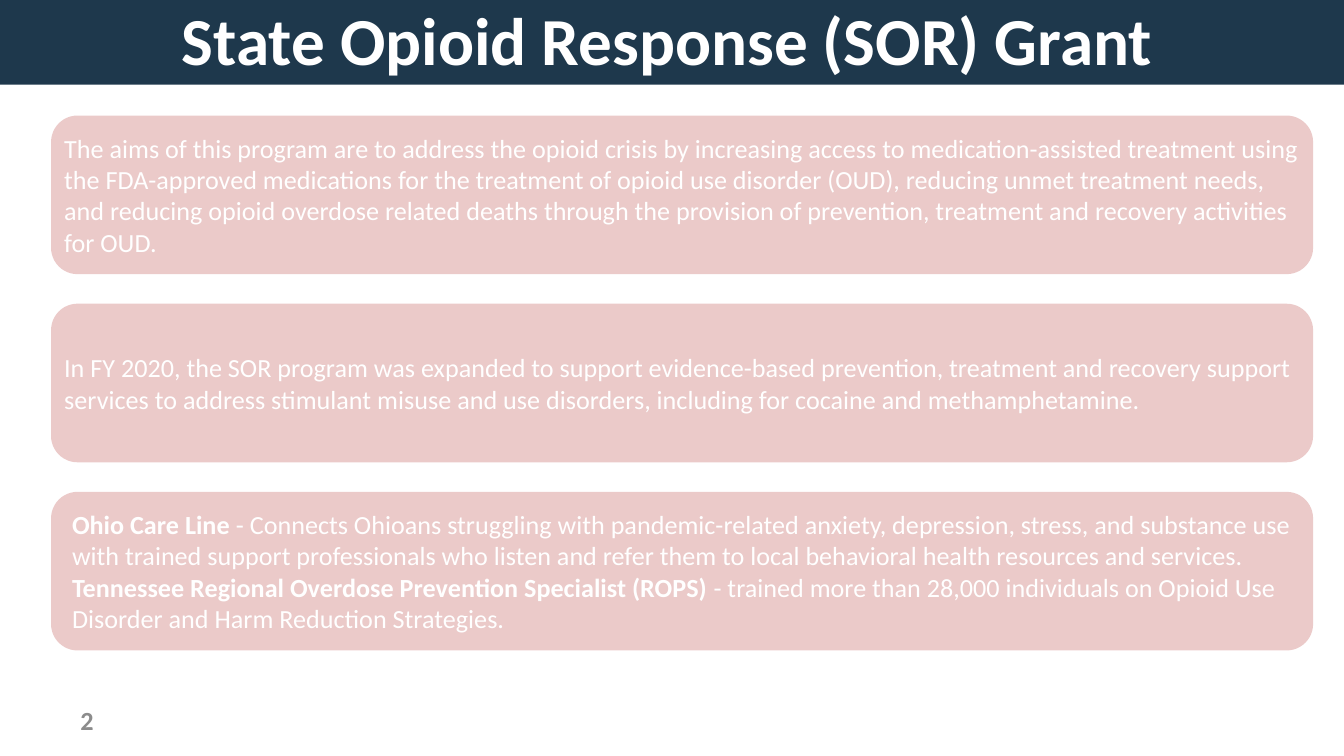
from pptx import Presentation
from pptx.dml.color import RGBColor
from pptx.enum.shapes import MSO_SHAPE
from pptx.enum.text import MSO_ANCHOR, PP_ALIGN
from pptx.oxml.ns import qn
from pptx.util import Inches, Pt
from lxml.etree import SubElement

TITLE = "State Opioid Response (SOR) Grant"
PAGE_NUMBER = "2"
PANELS = [
    {"inset": 0.04, "paragraphs": [
        ("", "The aims of this program are to address the opioid crisis by increasing access to "
             "medication-assisted treatment using the FDA-approved medications for the treatment "
             "of opioid use disorder (OUD), reducing unmet treatment needs, and reducing opioid "
             "overdose related deaths through the provision of prevention, treatment and recovery "
             "activities for OUD."),
    ]},
    {"inset": 0.04, "paragraphs": [
        ("", "In FY 2020, the SOR program was expanded to support evidence-based prevention, "
             "treatment and recovery support services to address stimulant misuse and use "
             "disorders, including for cocaine and methamphetamine."),
    ]},
    {"inset": 0.1, "paragraphs": [
        ("Ohio Care Line ",
         "- Connects Ohioans struggling with pandemic-related anxiety, depression, stress, and "
         "substance use with trained support professionals who listen and refer them to local "
         "behavioral health resources and services."),
        ("Tennessee Regional Overdose Prevention Specialist (ROPS) ",
         "- trained more than 28,000 individuals on Opioid Use Disorder and Harm Reduction "
         "Strategies."),
    ]},
]

THEME = {
    "font": "Calibri",
    "title_size": 36,
    "body_size": 14,
    "banner": "1E384C",
    "panel": "D99694",
    "panel_opacity": 50,
    "light": "FFFFFF",
    "muted": "8C8C8C",
}

SLIDE_WIDTH = Inches(10)
SLIDE_HEIGHT = SLIDE_WIDTH * 9 // 16
PANEL_LEFT, PANEL_TOP, PANEL_WIDTH, PANEL_HEIGHT = 0.38, 0.86, 9.39, 1.18
PANEL_STEP = 1.4


def style_font(font, size, color, bold=False):
    font.name = THEME["font"]
    font.size = Pt(size)
    font.bold = bold
    font.color.rgb = RGBColor.from_string(color)


def add_block(slide, preset, box, color):
    block = slide.shapes.add_shape(preset, *map(Inches, box))
    block.shadow.inherit = False
    block.fill.solid()
    block.fill.fore_color.rgb = RGBColor.from_string(color)
    block.line.fill.background()
    return block


def add_label(slide, box, text, size, color, align):
    frame = slide.shapes.add_textbox(*map(Inches, box)).text_frame
    frame.word_wrap = True
    frame.vertical_anchor = MSO_ANCHOR.MIDDLE
    frame.text = text
    frame.paragraphs[0].alignment = align
    style_font(frame.paragraphs[0].runs[0].font, size, color, bold=True)


def add_panel(slide, top, content):
    panel = add_block(slide, MSO_SHAPE.ROUNDED_RECTANGLE,
                      (PANEL_LEFT, top, PANEL_WIDTH, PANEL_HEIGHT), THEME["panel"])
    fill_color = next(panel.element.iter(qn("a:srgbClr")))
    SubElement(fill_color, qn("a:alpha")).set("val", str(THEME["panel_opacity"] * 1000))
    frame = panel.text_frame
    frame.word_wrap = True
    frame.vertical_anchor = MSO_ANCHOR.MIDDLE
    frame.margin_left = frame.margin_right = Inches(content["inset"])
    for index, (lead, detail) in enumerate(content["paragraphs"]):
        paragraph = frame.add_paragraph() if index else frame.paragraphs[0]
        paragraph.alignment = PP_ALIGN.LEFT
        for text, bold in ((lead, True), (detail, False)):
            if text:
                run = paragraph.add_run()
                run.text = text
                style_font(run.font, THEME["body_size"], THEME["light"], bold)


def main():
    deck = Presentation()
    deck.slide_width, deck.slide_height = SLIDE_WIDTH, SLIDE_HEIGHT
    slide = deck.slides.add_slide(deck.slide_layouts[6])
    add_block(slide, MSO_SHAPE.RECTANGLE, (0, 0, 10, 0.63), THEME["banner"])
    add_label(slide, (0.5, 5.21, 2.25, 0.3), PAGE_NUMBER,
              THEME["body_size"], THEME["muted"], PP_ALIGN.LEFT)
    add_label(slide, (0.76, 0, 8.41, 0.58), TITLE,
              THEME["title_size"], THEME["light"], PP_ALIGN.CENTER)
    for index, content in enumerate(PANELS):
        add_panel(slide, PANEL_TOP + index * PANEL_STEP, content)
    deck.save("out.pptx")


if __name__ == "__main__":
    main()
